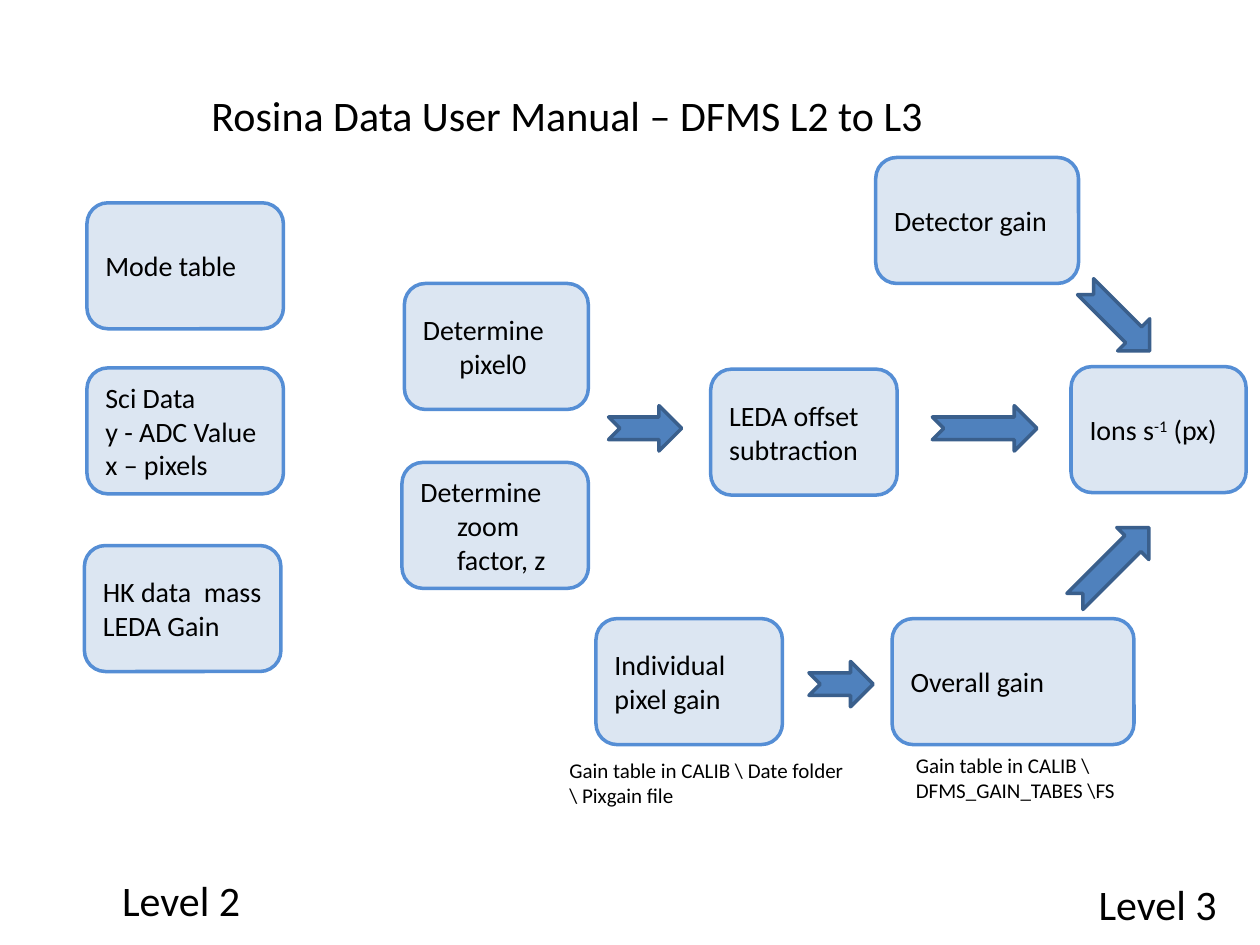
from dataclasses import dataclass

from pptx import Presentation, util as u
from pptx.dml.color import RGBColor
from pptx.enum import shapes, text

COLUMNS, ROWS = 100, 75
WIDTH, HEIGHT = u.Inches(10), u.Inches(7.5)


@dataclass(frozen=True)
class Theme:
    font: str = "Calibri"
    ink: str = "000000"
    step_fill: str = "DCE6F2"
    step_line: str = "558ED5"
    arrow_fill: str = "4F81BD"
    arrow_line: str = "3A5F8C"
    line_width: float = 2
    heading: int = 24
    body: int = 16
    note: int = 12


THEME = Theme()
STEP_HEIGHT = 10
ARROW_HEIGHT = 3.6
HANGING = 0.29

# Steps: left column, top row, columns wide, [(hanging, paragraph text)]
STEPS = [
    # Level 2 inputs
    (6.9, 16.1, 15.6, [(True, "Mode table")]),
    (6.9, 29.2, 15.6, [(True, "Sci Data"), (True, "y - ADC Value"), (True, "x – pixels")]),
    (6.7, 43.3, 15.6, [(False, "HK data  mass"), (True, "LEDA Gain")]),
    # Processing
    (32.1, 22.5, 14.6, [(True, "Determine pixel0")]),
    (31.9, 36.7, 14.8, [(True, "Determine zoom factor, z")]),
    (56.4, 29.3, 14.8, [(False, "LEDA offset subtraction")]),
    # Gains
    (69.5, 12.5, 16.1, [(True, "Detector gain")]),
    (47.3, 49.1, 14.8, [(False, "Individual pixel gain")]),
    (70.8, 49.1, 19.2, [(True, "Overall gain")]),
    # Level 3 result; a "^" part is superscript
    (85, 29.1, 13.9, [(True, "Ions s|^-1| (px)")]),
]

# Arrows: left column, top row, columns long, rotation
ARROWS = [
    (48.3, 32.2, 5.8, 0),
    (74, 32.2, 8.3, 0),
    (64.2, 52.5, 5.1, 0),
    (85.1, 23.5, 7.2, 45),
    (84.1, 43, 8.3, 315),
]

# Labels: left column, top row, columns wide, size, wrap, lines
LABELS = [
    (15.8, 6.6, 58.9, THEME.heading, False, ["Rosina Data User Manual – DFMS L2 to L3"]),
    (8.7, 68.9, 11.5, THEME.heading, False, ["Level 2"]),
    (86.2, 69.2, 11.5, THEME.heading, False, ["Level 3"]),
    (71.7, 59.2, 18.8, THEME.note, True, ["Gain table in CALIB \\ DFMS_GAIN_TABES \\FS"]),
    (44.2, 59.6, 24.4, THEME.note, False,
     ["Gain table in CALIB \\ Date folder", "\\ Pixgain file"]),
]


def place(column, row, columns, rows):
    """Turn grid cells into slide lengths."""
    across, down = WIDTH / COLUMNS, HEIGHT / ROWS
    return [u.Emu(round(n)) for n in
            (column * across, row * down, columns * across, rows * down)]


def write(frame, paragraphs, size):
    for index, (hanging, content) in enumerate(paragraphs):
        para = frame.paragraphs[0] if index == 0 else frame.add_paragraph()
        para.alignment = text.PP_ALIGN.LEFT
        if hanging:
            indent = u.Inches(HANGING)
            properties = para._p.get_or_add_pPr()
            properties.set("marL", str(indent))
            properties.set("indent", str(-indent))
        for part in content.split("|"):
            span = para.add_run()
            span.text = part.lstrip("^")
            span.font.name = THEME.font
            span.font.size = u.Pt(size)
            span.font.color.rgb = RGBColor.from_string(THEME.ink)
            if part.startswith("^"):
                span._r.get_or_add_rPr().set("baseline", "30000")


def add_block(page, kind, area, fill, line):
    block = page.shapes.add_shape(kind, *place(*area))
    block.shadow.inherit = False
    block.fill.solid()
    block.fill.fore_color.rgb = RGBColor.from_string(fill)
    block.line.color.rgb = RGBColor.from_string(line)
    block.line.width = u.Pt(THEME.line_width)
    return block


def add_step(page, column, row, columns, paragraphs):
    box = add_block(page, shapes.MSO_SHAPE.ROUNDED_RECTANGLE,
                    (column, row, columns, STEP_HEIGHT),
                    THEME.step_fill, THEME.step_line)
    box.text_frame.word_wrap = True
    box.text_frame.vertical_anchor = text.MSO_ANCHOR.MIDDLE
    write(box.text_frame, paragraphs, THEME.body)


def add_arrow(page, column, row, columns, rotation):
    arrow = add_block(page, shapes.MSO_SHAPE.NOTCHED_RIGHT_ARROW,
                      (column, row, columns, ARROW_HEIGHT),
                      THEME.arrow_fill, THEME.arrow_line)
    arrow.rotation = rotation


def add_label(page, column, row, columns, size, wrap, lines):
    box = page.shapes.add_textbox(*place(column, row, columns, 5))
    box.text_frame.word_wrap = wrap
    box.text_frame.auto_size = text.MSO_AUTO_SIZE.SHAPE_TO_FIT_TEXT
    write(box.text_frame, [(False, line) for line in lines], size)


def main():
    deck = Presentation()
    deck.slide_width, deck.slide_height = WIDTH, HEIGHT
    page = deck.slides.add_slide(deck.slide_layouts[6])

    for step in STEPS:
        add_step(page, *step)
    for arrow in ARROWS:
        add_arrow(page, *arrow)
    for label in LABELS:
        add_label(page, *label)

    deck.save("out.pptx")


if __name__ == "__main__":
    main()
